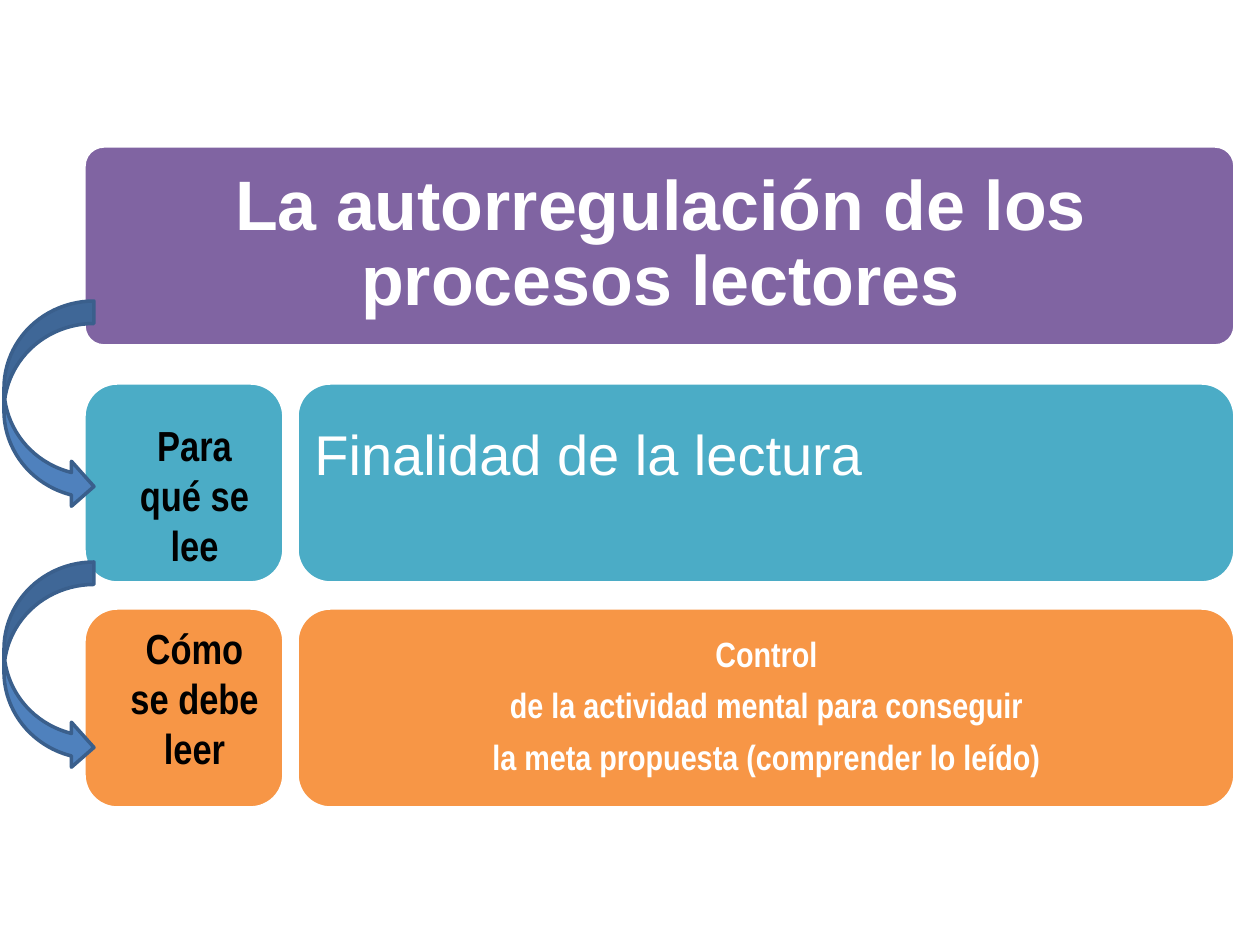
from dataclasses import dataclass
from typing import Any

from pptx import Presentation
from pptx.dml.color import RGBColor
from pptx.enum.shapes import MSO_SHAPE
from pptx.enum.text import MSO_ANCHOR, MSO_AUTO_SIZE, PP_ALIGN
from pptx.util import Emu, Pt

COLORS = {
    "white": "FFFFFF",
    "black": "000000",
    "purple": "8064A2",
    "teal": "4BACC6",
    "orange": "F79646",
    "blue": "4F81BD",
    "navy": "3A5F8C",
}


def color(name):
    return RGBColor.from_string(COLORS[name])


def px(*lengths):
    return [Emu(round(length * 914400 / 126)) for length in lengths]


@dataclass
class Painter:
    """Draws styled panels, arrows and texts on the current slide."""

    page: Any
    heading_font: str = "Arial"
    label_font: str = "Arial Narrow"
    line_width: float = 2

    def shape(self, kind, place, fill, line):
        shape = self.page.shapes.add_shape(kind, *px(*place))
        shape.shadow.inherit = False
        shape.fill.solid()
        shape.fill.fore_color.rgb = color(fill)
        shape.line.color.rgb = color(line)
        shape.line.width = Pt(self.line_width)
        return shape

    def panel(self, place, fill, rounding=0.167):
        panel = self.shape(MSO_SHAPE.ROUNDED_RECTANGLE, place, fill, "white")
        panel.adjustments[0] = rounding

    def arrow(self, place):
        self.shape(MSO_SHAPE.CURVED_RIGHT_ARROW, place, "blue", "navy")

    def text(self, place, words, size, font, ink="white", bold=True, align=PP_ALIGN.CENTER):
        box = self.page.shapes.add_textbox(*px(*place))
        frame = box.text_frame
        frame.text = words
        frame.word_wrap = True
        frame.auto_size = MSO_AUTO_SIZE.SHAPE_TO_FIT_TEXT
        for para in frame.paragraphs:
            para.alignment = align
            for span in para.runs:
                span.font.name = font
                span.font.size = Pt(size)
                span.font.bold = bold
                span.font.color.rgb = color(ink)
        return frame

    def centred_text(self, place, words, size, font, inset, space_after):
        frame = self.text(place, words, size, font)
        frame.auto_size = MSO_AUTO_SIZE.NONE
        frame.vertical_anchor = MSO_ANCHOR.MIDDLE
        frame.margin_left, frame.margin_top = px(*inset)
        frame.margin_right, frame.margin_bottom = px(*inset)
        for para in frame.paragraphs:
            para.line_spacing = 0.9
            para.space_after = Pt(space_after)


def main():
    deck = Presentation()
    deck.slide_width, deck.slide_height = px(1260, 945)
    painter = Painter(deck.slides.add_slide(deck.slide_layouts[6]))

    left, height = 84, 200
    painter.panel((left, 146, 1151, height), "purple", 0.1)
    painter.centred_text((91, 151, 1139, 189), "La autorregulación de los procesos lectores",
                         40, painter.heading_font, (10, 8), 16)

    for top, fill in ((383, "teal"), (608, "orange")):
        painter.panel((left, top, height, height), fill)
        painter.panel((297, top, 938, height), fill)

    control = ("Control\nde la actividad mental para conseguir\n"
               "la meta propuesta (comprender lo leído)")
    painter.centred_text((307, 617, 919, 181), control, 20, painter.label_font, (20, 20), 8)
    painter.text((302, 413, 863, 118), "Finalidad de la lectura", 32,
                 painter.heading_font, bold=False, align=PP_ALIGN.LEFT)

    for top, label in ((413, "Para qué se lee"), (616, "Cómo se debe leer")):
        painter.text((115, top, 159, 204), label, 24, painter.label_font, "black")

    for top in (301, 562):
        painter.arrow((4, top, 90, 208))

    deck.save("out.pptx")


if __name__ == "__main__":
    main()
